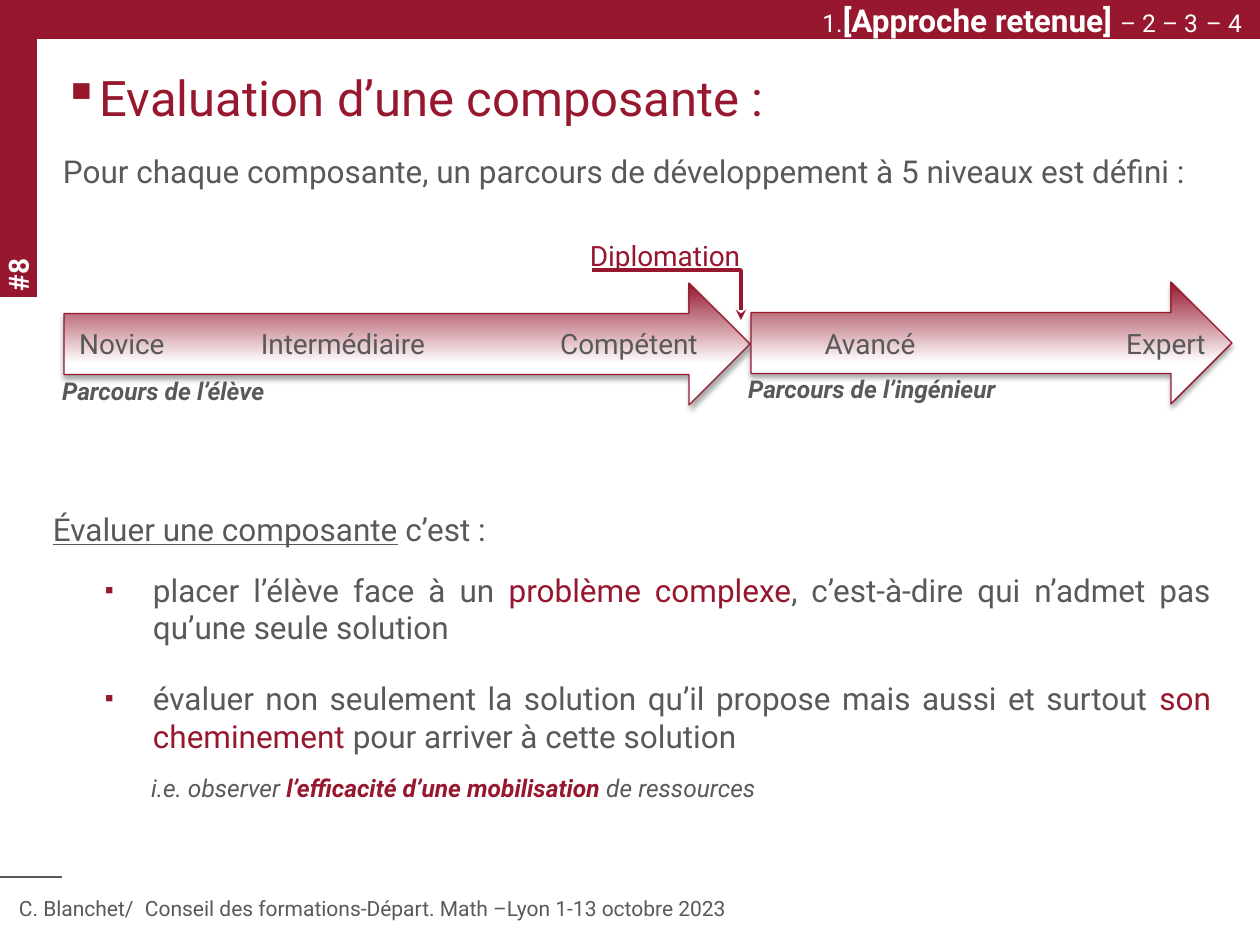
from lxml import etree
from pptx import Presentation
from pptx import util as u
from pptx.dml.color import RGBColor
from pptx.enum import shapes, text
from pptx.oxml import ns

PX = 914400 / 126
FONT = "Roboto"
RED = RGBColor(0x96, 0x17, 0x2E)
GREY = RGBColor(0x59, 0x59, 0x59)
WHITE = RGBColor(0xFF, 0xFF, 0xFF)
ALIGN = text.PP_ALIGN
INSETS = {"margin_left": 13, "margin_right": 13, "margin_top": 6, "margin_bottom": 6}


def px(value):
    return u.Emu(round(value * PX))


def child(parent, tag, **attributes):
    element = etree.SubElement(parent, ns.qn(tag))
    for name, value in attributes.items():
        element.set(name, str(value))
    return element


def set_values(target, values):
    for name, value in values.items():
        setattr(target, name, value)


def place(shape, box):
    set_values(shape, dict(zip(("left", "top", "width", "height"), map(px, box))))


def write_paragraph(paragraph, runs, size, color=GREY, align=ALIGN.LEFT, after=0,
                    indent=(0, 0), bullet=None, tab=None):
    """Fill a paragraph with (text, format) runs; bullet is its size in percent."""
    set_values(paragraph, {"alignment": align, "line_spacing": 1.0,
                           "space_before": u.Pt(0), "space_after": u.Pt(after)})
    properties = paragraph._p.get_or_add_pPr()
    properties.set("marL", str(px(indent[0])))
    properties.set("indent", str(px(indent[1])))
    if bullet:
        child(child(properties, "a:buClr"), "a:srgbClr", val=RED)
        child(properties, "a:buSzPct", val=bullet * 1000)
        child(properties, "a:buChar", char="▪")
    else:
        child(properties, "a:buNone")
    if tab:
        child(child(properties, "a:tabLst"), "a:tab", pos=px(tab), algn="l")
    for words, changes in runs:
        run = paragraph.add_run()
        run.text = words
        values = {"name": FONT, "size": size, "color": color, **changes}
        run.font.color.rgb = values.pop("color")
        values["size"] = u.Pt(values["size"])
        set_values(run.font, values)


def prepare_frame(shape):
    frame = shape.text_frame
    set_values(frame, {"word_wrap": True, "auto_size": text.MSO_AUTO_SIZE.NONE,
                       "vertical_anchor": text.MSO_ANCHOR.TOP})
    set_values(frame, {name: px(value) for name, value in INSETS.items()})
    return frame


def add_text(slide, box, runs, size, **options):
    shape = slide.shapes.add_textbox(*map(px, box))
    if isinstance(runs, str):
        runs = [(runs, {})]
    write_paragraph(prepare_frame(shape).paragraphs[0], runs, size, **options)
    return shape


def add_band(slide, box):
    band = slide.shapes.add_shape(shapes.MSO_SHAPE.RECTANGLE, *map(px, box))
    band.shadow.inherit = False
    band.fill.solid()
    band.fill.fore_color.rgb = RED
    band.line.fill.background()


def add_frame_bands(slide, box):
    """Top band with the section trail, side band with the page number."""
    left, top, width, height = box
    add_band(slide, (left, top, width, 39))
    add_band(slide, (left, top, 37, height))
    number = add_text(slide, (left - 103, top + 161, 241, 45),
                      [("#8", {"bold": True})], 16, color=WHITE)
    number.rotation = 270
    trail = [("1.", {}), ("[Approche retenue] ", {"size": 18, "bold": True}),
             ("– 2 – 3", {}), (" ", {"size": 18}), ("– 4", {})]
    add_text(slide, (left + width - 493, top - 5, 488, 50), trail, 14,
             color=WHITE, align=ALIGN.RIGHT)


def add_footer(slide, box):
    left, top, width, height = box
    rule = slide.shapes.add_connector(shapes.MSO_CONNECTOR.STRAIGHT,
                                      *map(px, (left, top, left + 62, top)))
    rule.line.color.rgb = GREY
    rule.line.width = u.Pt(0.75)
    child(rule._element.spPr, "a:effectLst")
    add_text(slide, (left + 6, top + 13, width - 6, height - 13),
             "C. Blanchet/\tConseil des formations-Départ. Math –Lyon 1-13 octobre 2023",
             12, tab=151)


def add_heading(slide, box):
    left, top, width, height = box
    title = slide.shapes.title
    place(title, (left, top, width, 74))
    write_paragraph(prepare_frame(title).paragraphs[0],
                    [("Evaluation d’une composante :", {})], 28, color=RED,
                    indent=(32, -32), bullet=100)
    add_text(slide, (left, top + 85, width, height - 85),
             "Pour chaque composante, un parcours de développement à 5 niveaux est défini :",
             18, align=ALIGN.JUSTIFY)


def add_path_arrow(slide, box):
    arrow = slide.shapes.add_shape(shapes.MSO_SHAPE.RIGHT_ARROW, *map(px, box))
    arrow.fill.gradient()
    arrow.fill.gradient_angle = 90
    for stop, (position, color) in zip(arrow.fill.gradient_stops,
                                       ((0.34, WHITE), (1, RED))):
        stop.position = position
        stop.color.rgb = color
    arrow.line.color.rgb = RED
    arrow.line.width = u.Pt(0.75)
    arrow.shadow.inherit = False
    effects = arrow._element.spPr.find(ns.qn("a:effectLst"))
    shadow = child(effects, "a:outerShdw", blurRad=u.Pt(3.1), dist=u.Pt(1.8),
                   dir=5400000, rotWithShape=0)
    child(child(shadow, "a:srgbClr", val="000000"), "a:alpha", val=35000)


def add_development_path(slide, box):
    """Two arrows with five levels, captions and the graduation marker."""
    left, top, width, height = box
    split = 687
    add_path_arrow(slide, (left, top + 44, split - 1, 122))
    add_path_arrow(slide, (left + split, top + 43, width - split, 122))
    # Levels, each centred on its own point of the path
    for level, center in (("Novice", 58), ("Intermédiaire", 279), ("Compétent", 565),
                          ("Avancé", 806), ("Expert", 1102)):
        add_text(slide, (left + center - 100, top + 82, 200, 63), level, 16,
                 align=ALIGN.CENTER)
    for caption, x, y in (("Parcours de l’élève", -15, 131),
                          ("Parcours de l’ingénieur", split - 16, 129)):
        add_text(slide, (left + x, top + y, 382, 69),
                 [(caption, {"bold": True, "italic": True})], 14)
    # Graduation marker
    add_text(slide, (left + 466, top - 6, 270, 63), "Diplomation", 16,
             color=RED, align=ALIGN.CENTER)
    builder = slide.shapes.build_freeform(left + 677, top + 81, scale=PX)
    builder.add_line_segments([(left + 677, top + 31), (left + 528, top + 31)],
                              close=False)
    marker = builder.convert_to_shape()
    marker.shadow.inherit = False
    marker.fill.background()
    marker.line.color.rgb = RED
    marker.line.width = u.Pt(2)
    child(marker.line._get_or_add_ln(), "a:headEnd", type="stealth")


def add_assessment_list(slide, box):
    body = slide.placeholders[1]
    place(body, box)
    frame = prepare_frame(body)
    red = {"color": RED}
    item = {"size": 18, "align": ALIGN.JUSTIFY, "indent": (100, -48), "bullet": 80}
    rows = [
        ([("Évaluer une composante", {"underline": True}), (" c’est :", {})],
         {"size": 18, "align": ALIGN.JUSTIFY, "after": 13}),
        ([("placer l’élève face à un ", {}), ("problème complexe", red),
          (", c’est-à-dire qui n’admet pas qu’une seule solution", {})],
         {**item, "after": 19}),
        ([("évaluer non seulement la solution qu’il propose mais aussi et surtout ", {}),
          ("son cheminement ", red), ("pour arriver à cette solution", {})],
         {**item, "after": 10}),
        ([("i.e. observer ", {"italic": True}),
          ("l’efficacité d’une mobilisation ", {**red, "bold": True, "italic": True}),
          ("de ressources", {"italic": True})],
         {"size": 14, "indent": (98, 0)}),
    ]
    for index, (runs, options) in enumerate(rows):
        paragraph = frame.add_paragraph() if index else frame.paragraphs[0]
        write_paragraph(paragraph, runs, **options)


def main():
    presentation = Presentation()
    presentation.slide_width = px(1260)
    presentation.slide_height = px(945)
    slide = presentation.slides.add_slide(presentation.slide_layouts[1])
    add_frame_bands(slide, (0, 0, 1260, 297))
    add_footer(slide, (0, 877, 1067, 51))
    add_heading(slide, (50, 61, 1184, 135))
    add_development_path(slide, (64, 239, 1168, 167))
    add_assessment_list(slide, (40, 504, 1184, 306))
    presentation.save("out.pptx")


if __name__ == "__main__":
    main()
